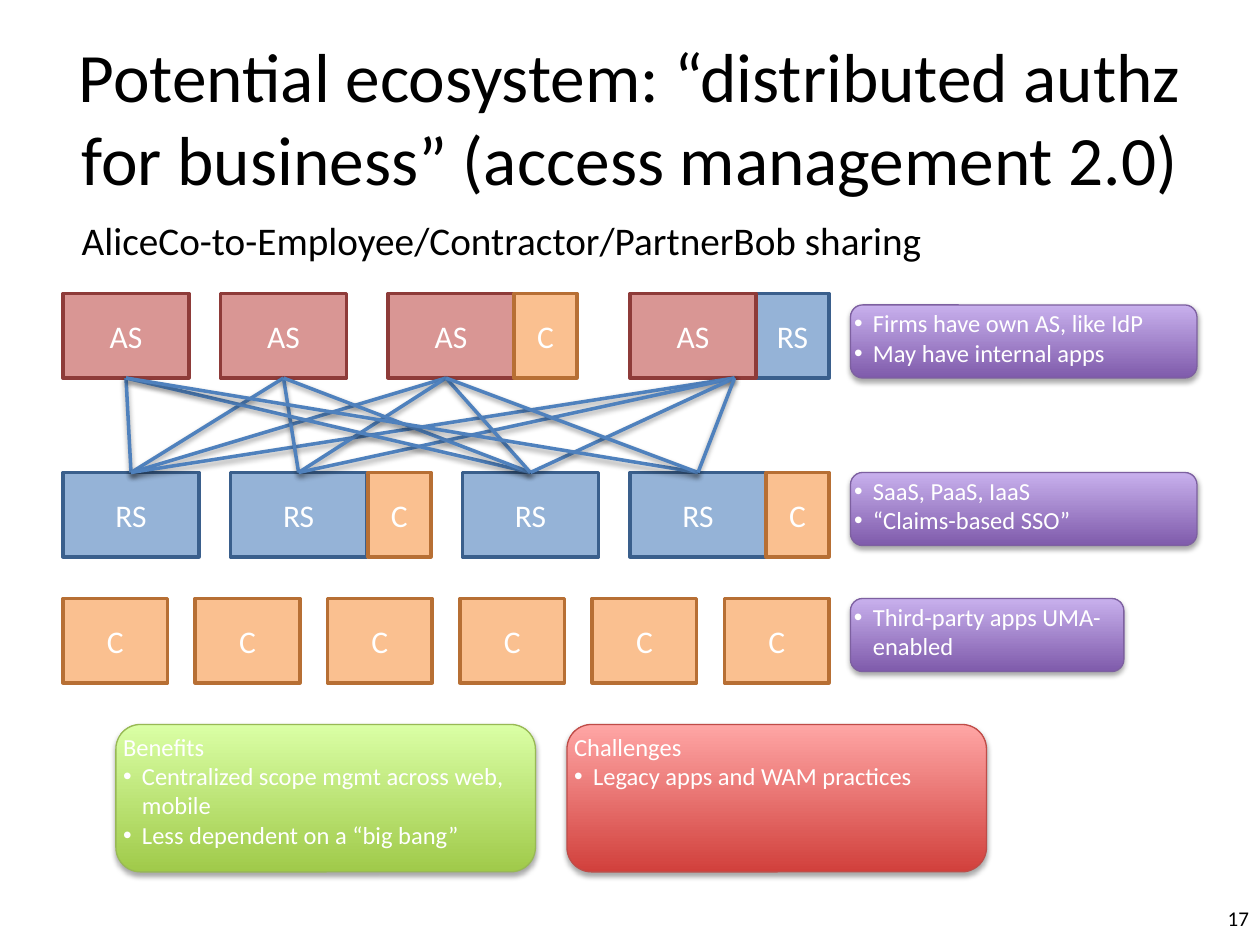
from lxml import etree
from pptx import Presentation
from pptx.dml.color import RGBColor
from pptx.enum.shapes import MSO_CONNECTOR as CONNECTOR, MSO_SHAPE as SHAPE
from pptx.enum.text import MSO_ANCHOR as ANCHOR, PP_ALIGN as ALIGN
from pptx.oxml.ns import qn
from pptx.util import Inches, Pt

COLORS = {
    "text": "000000", "box_text": "FFFFFF", "link": "4F81BD",
    "AS": "D99694", "AS_line": "8E3B39",
    "RS": "95B3D7", "RS_line": "3A5F8C",
    "C": "FAC090", "C_line": "B76F34",
    "purple": "7F5BAB", "purple_top": "C8B0ED", "purple_line": "7D60A0",
    "green": "A0CA4A", "green_top": "DAFFA5", "green_line": "98B955",
    "red": "D1403C", "red_top": "FFA6A5", "red_line": "BF4C48",
}
TOP_ROW, MIDDLE_ROW, BOTTOM_ROW = 2.33, 3.75, 4.75
BOX_HEIGHT = 0.67


class SlideBuilder:
    """Draws styled elements on the current slide."""

    def __init__(self, slide, font="Calibri"):
        self.slide = slide
        self.font = font

    def color(self, name):
        return RGBColor.from_string(COLORS[name])

    def format(self, paragraph, size, color, align=ALIGN.LEFT):
        paragraph.alignment = align
        for run in paragraph.runs:
            run.font.name = self.font
            run.font.size = Pt(size)
            run.font.color.rgb = self.color(color)

    def outline(self, shape, color, width):
        shape.line.color.rgb = self.color(color)
        shape.line.width = Pt(width)

    def shadow(self, shape, distance, opacity):
        effects = etree.SubElement(shape._element.spPr, qn("a:effectLst"))
        outer = etree.SubElement(
            effects, qn("a:outerShdw"), blurRad=str(Pt(3.1)), dist=str(Pt(distance)),
            dir="5400000", rotWithShape="0")
        black = etree.SubElement(outer, qn("a:srgbClr"), val="000000")
        etree.SubElement(black, qn("a:alpha"), val=str(opacity * 1000))

    def bullet(self, paragraph):
        properties = paragraph._p.get_or_add_pPr()
        properties.set("marL", str(Inches(0.15)))
        properties.set("indent", str(Inches(-0.15)))
        etree.SubElement(properties, qn("a:buFont"), typeface="Arial")
        etree.SubElement(properties, qn("a:buChar"), char="•")

    def text(self, text, left, top, width, height, size,
             align=ALIGN.LEFT, anchor=ANCHOR.TOP):
        shape = self.slide.shapes.add_textbox(
            Inches(left), Inches(top), Inches(width), Inches(height))
        frame = shape.text_frame
        frame.word_wrap = True
        frame.vertical_anchor = anchor
        frame.text = text
        self.format(frame.paragraphs[0], size, "text", align)

    def box(self, role, left, top, width):
        shape = self.slide.shapes.add_shape(
            SHAPE.RECTANGLE, Inches(left), Inches(top), Inches(width), Inches(BOX_HEIGHT))
        shape.shadow.inherit = False
        shape.fill.solid()
        shape.fill.fore_color.rgb = self.color(role)
        self.outline(shape, f"{role}_line", 2)
        shape.text_frame.vertical_anchor = ANCHOR.MIDDLE
        shape.text_frame.text = role
        self.format(shape.text_frame.paragraphs[0], 18, "box_text", ALIGN.CENTER)
        return shape

    def link(self, resource, server, end_x):
        start_x = resource.left + resource.width // 2
        connector = self.slide.shapes.add_connector(
            CONNECTOR.STRAIGHT, start_x, resource.top,
            Inches(end_x), server.top + server.height)
        connector.begin_connect(resource, 0)
        if abs(server.left + server.width // 2 - Inches(end_x)) < Inches(0.01):
            connector.end_connect(server, 2)
        self.outline(connector, "link", 2)
        self.shadow(connector, 1.6, 38)

    def note(self, color, left, top, width, height, items, heading=None):
        shape = self.slide.shapes.add_shape(
            SHAPE.ROUNDED_RECTANGLE, Inches(left), Inches(top), Inches(width), Inches(height))
        shape.fill.gradient()
        shape.fill.gradient_angle = 90
        for stop, name in zip(shape.fill.gradient_stops, (color, f"{color}_top")):
            stop.color.rgb = self.color(name)
        self.outline(shape, f"{color}_line", 0.75)
        self.shadow(shape, 1.8, 35)
        frame = shape.text_frame
        frame.word_wrap = True
        frame.vertical_anchor = ANCHOR.TOP
        frame.margin_left = frame.margin_right = frame.margin_top = frame.margin_bottom = 0
        lines = ([heading] if heading else []) + items
        frame.text = "\n".join(lines)
        for line, paragraph in zip(lines, frame.paragraphs):
            if line != heading:
                self.bullet(paragraph)
            self.format(paragraph, 14, "box_text")


def main():
    presentation = Presentation()
    presentation.slide_width, presentation.slide_height = Inches(10), Inches(7.5)
    builder = SlideBuilder(presentation.slides.add_slide(presentation.slide_layouts[6]))

    builder.text("Potential ecosystem: “distributed authz for business” (access management 2.0)",
                 0.5, 0.3, 9, 1.25, 39.6, ALIGN.CENTER, ANCHOR.MIDDLE)
    builder.text("AliceCo-to-Employee/Contractor/PartnerBob sharing", 0.55, 1.67, 8.5, 0.42, 22.4)
    builder.text("17", 9.62, 7.14, 0.39, 0.4, 12, ALIGN.RIGHT)

    resources = [builder.box("RS", left, MIDDLE_ROW, 1.08) for left in (0.5, 1.83, 3.67, 5)]
    for left in (2.92, 6.08):
        builder.box("C", left, MIDDLE_ROW, 0.5)
    for column in range(6):
        builder.box("C", 0.5 + 1.05 * column, BOTTOM_ROW, 0.83)
    builder.box("RS", 6, TOP_ROW, 0.58)
    servers = [builder.box("AS", left, TOP_ROW, 1) for left in (0.5, 1.75, 3.08, 5)]
    builder.box("C", 4.08, TOP_ROW, 0.5)

    for row, resource in enumerate(resources):
        for column, (server, end_x) in enumerate(zip(servers, (1, 2.25, 3.54, 5.83))):
            if (row, column) not in ((1, 0), (3, 1)):
                builder.link(resource, server, end_x)

    for top, width, items in (
        (2.42, 2.75, ["Firms have own AS, like IdP", "May have internal apps"]),
        (MIDDLE_ROW, 2.75, ["SaaS, PaaS, IaaS", "“Claims-based SSO”"]),
        (BOTTOM_ROW, 2.17, ["Third-party apps UMA-enabled"]),
    ):
        builder.note("purple", 6.75, top, width, 0.58, items)
    for color, left, heading, items in (
        ("green", 0.92, "Benefits",
         ["Centralized scope mgmt across web, mobile", "Less dependent on a “big bang”"]),
        ("red", 4.5, "Challenges", ["Legacy apps and WAM practices"]),
    ):
        builder.note(color, left, 5.75, 3.33, 1.17, items, heading)

    presentation.save("out.pptx")


if __name__ == "__main__":
    main()
